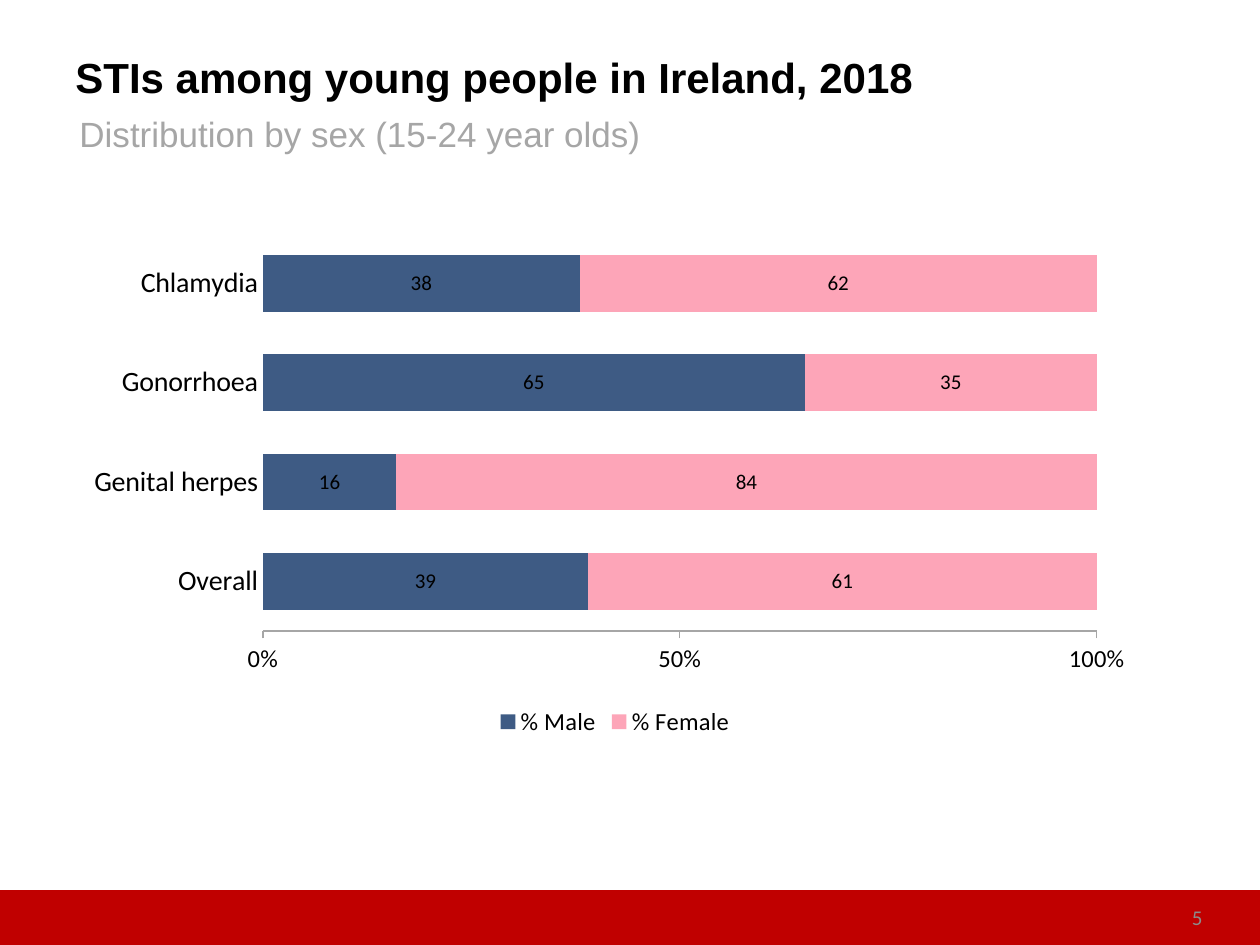
from lxml import etree
from pptx import Presentation
from pptx.chart.data import CategoryChartData
from pptx.dml.color import RGBColor
from pptx.enum.chart import XL_CHART_TYPE as ChartType
from pptx.enum.chart import XL_LABEL_POSITION as LabelPosition
from pptx.enum.chart import XL_LEGEND_POSITION as LegendPosition
from pptx.enum.chart import XL_TICK_MARK as TickMark
from pptx.enum.shapes import MSO_SHAPE as Shape
from pptx.enum.text import MSO_ANCHOR as Anchor
from pptx.enum.text import PP_ALIGN as Align
from pptx.oxml.ns import qn
from pptx.util import Pt

PX_PER_INCH = 126
PAGE_W, PAGE_H = 1260, 945

BLACK = RGBColor(0x00, 0x00, 0x00)
RED = RGBColor(0xC0, 0x00, 0x00)
GREY = RGBColor(0xA6, 0xA6, 0xA6)
NUMBER_GREY = RGBColor(0x8C, 0x8C, 0x8C)
MALE_BLUE = RGBColor(0x3E, 0x5B, 0x84)
FEMALE_PINK = RGBColor(0xFD, 0xA5, 0xB8)

DISEASES = ["Overall", "Genital herpes", "Gonorrhoea", "Chlamydia"]
SEXES = [
    ("% Male", [39, 16, 65, 38], MALE_BLUE),
    ("% Female", [61, 84, 35, 62], FEMALE_PINK),
]


def px(length):
    return round(length * 914400 / PX_PER_INCH)


def style_font(font, size, color=BLACK, name="Calibri", bold=False):
    font.name = name
    font.size = Pt(size)
    font.bold = bold
    font.color.rgb = color


def add_text(page, left, top, width, height, text, size, color,
             name="Arial", bold=False, align=Align.LEFT, anchor=Anchor.MIDDLE):
    box = page.shapes.add_textbox(px(left), px(top), px(width), px(height))
    frame = box.text_frame
    frame.word_wrap = True
    frame.vertical_anchor = anchor
    frame.text = text
    para = frame.paragraphs[0]
    para.alignment = align
    style_font(para.runs[0].font, size, color, name, bold)


def add_heading(page, left, top, width):
    add_text(page, left, top, width, 78,
             "STIs among young people in Ireland, 2018", 24, BLACK, bold=True)
    add_text(page, left + 4, top + 68, 761, 55,
             "Distribution by sex (15-24 year olds)", 20, GREY, anchor=Anchor.TOP)


def add_footer(page, left, top, width, height):
    band = page.shapes.add_shape(Shape.RECTANGLE, px(left), px(top), px(width), px(height))
    band.shadow.inherit = False
    band.fill.solid()
    band.fill.fore_color.rgb = RED
    band.line.color.rgb = RED
    band.line.width = Pt(2)
    add_text(page, left + width - 339, top, 294, 50, "5", 12, NUMBER_GREY,
             name="Calibri", align=Align.RIGHT)


def set_plot_layout(chart, **fractions):
    """Fix the inner plot area, in fractions of the chart."""
    area = chart._chartSpace.chart.plotArea
    for old in area.findall(qn("c:layout")):
        area.remove(old)
    layout = etree.Element(qn("c:layout"))
    manual = etree.SubElement(layout, qn("c:manualLayout"))
    settings = {"layoutTarget": "inner", "xMode": "edge", "yMode": "edge", **fractions}
    for tag, value in settings.items():
        etree.SubElement(manual, qn(f"c:{tag}")).set("val", str(value))
    area.insert(0, layout)


def add_sex_chart(page, left, top, width, height):
    data = CategoryChartData(number_format="0")
    data.categories = DISEASES
    for name, values, _ in SEXES:
        data.add_series(name, values)
    chart = page.shapes.add_chart(ChartType.BAR_STACKED_100, px(left), px(top),
                                  px(width), px(height), data).chart
    style_font(chart.font, 10)
    chart.has_title = False
    set_plot_layout(chart, x=0.18, y=0.055, w=0.758, h=0.739)

    # Bars and their labels
    plot = chart.plots[0]
    plot.gap_width = 75
    plot.overlap = 100
    plot.vary_by_categories = False
    for series, (_, _, color) in zip(plot.series, SEXES):
        series.format.fill.solid()
        series.format.fill.fore_color.rgb = color
        labels = series.data_labels
        labels.show_value = True
        labels.position = LabelPosition.CENTER
        style_font(labels.font, 12)

    # Axes
    diseases = chart.category_axis
    diseases.major_tick_mark = TickMark.NONE
    diseases.format.line.fill.background()
    style_font(diseases.tick_labels.font, 16)

    share = chart.value_axis
    share.minimum_scale = 0
    share.maximum_scale = 1
    share.major_unit = 0.5
    share.has_major_gridlines = False
    share.major_tick_mark = TickMark.OUTSIDE
    share.format.line.color.rgb = GREY
    share.format.line.width = Pt(0.75)
    share.tick_labels.number_format = "0%"
    share.tick_labels.number_format_is_linked = False
    style_font(share.tick_labels.font, 14)

    # Legend
    chart.has_legend = True
    chart.legend.position = LegendPosition.BOTTOM
    chart.legend.include_in_layout = False
    style_font(chart.legend.font, 14)


def main():
    deck = Presentation()
    deck.slide_width = px(PAGE_W)
    deck.slide_height = px(PAGE_H)
    page = deck.slides.add_slide(deck.slide_layouts[6])
    add_footer(page, 0, 892, PAGE_W, 53)
    add_heading(page, 63, 38, 977)
    add_sex_chart(page, 65, 204, 1100, 538)
    deck.save("out.pptx")


if __name__ == "__main__":
    main()
